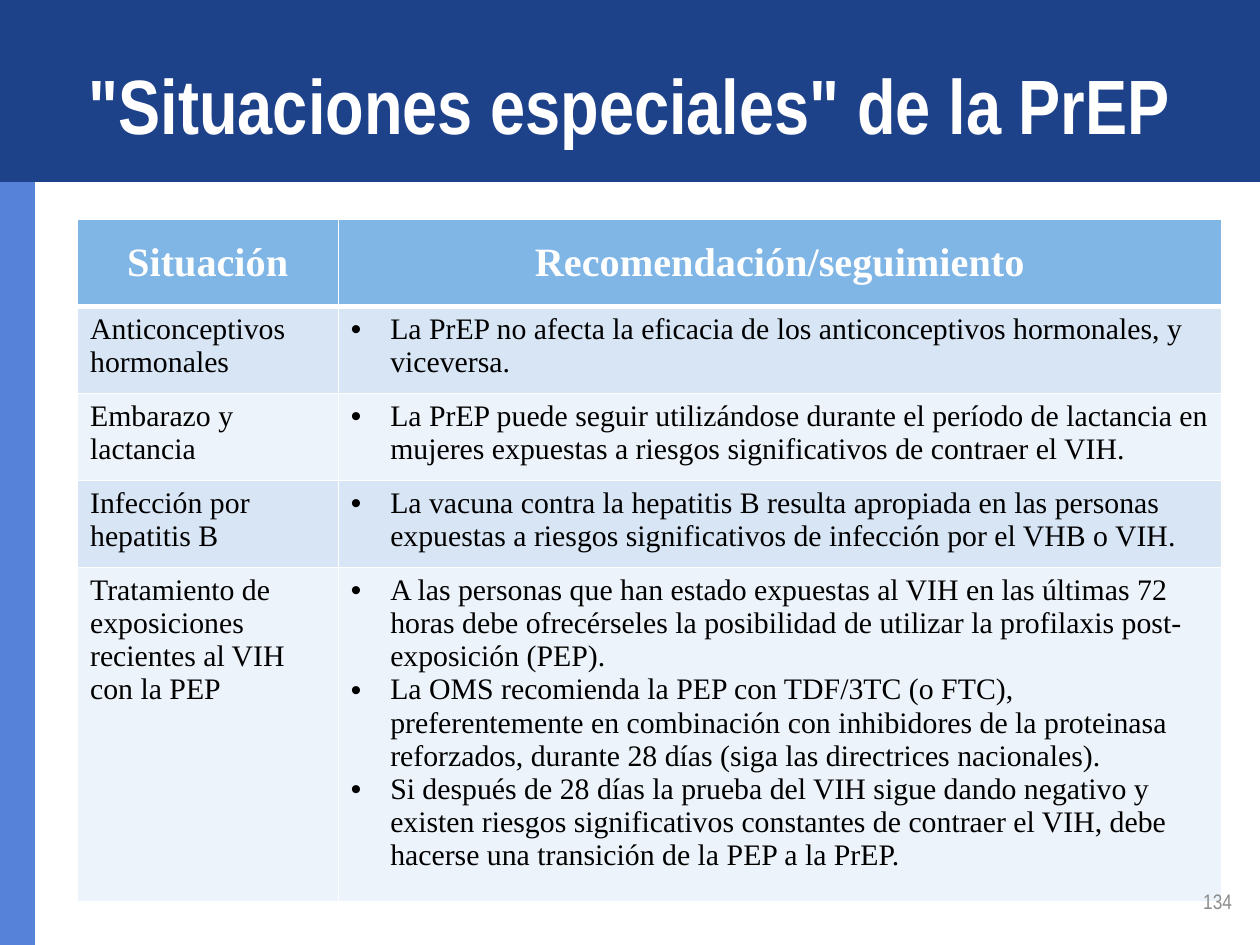
from lxml.etree import SubElement
from pptx import Presentation
from pptx.dml.color import RGBColor
from pptx.enum.shapes import MSO_SHAPE as Preset
from pptx.enum.text import MSO_ANCHOR as Anchor, PP_ALIGN as Align
from pptx.oxml.ns import qn
from pptx.util import Pt

WHITE = RGBColor(0xFF, 0xFF, 0xFF)
BLACK = RGBColor(0, 0, 0)
GRAY = RGBColor(0x8C, 0x8C, 0x8C)
NAVY = RGBColor(0x1E, 0x42, 0x8A)
BLUE = RGBColor(0x56, 0x82, 0xDA)
HEADER_BLUE = RGBColor(0x80, 0xB6, 0xE6)
BANDS = (RGBColor(0xD8, 0xE5, 0xF5), RGBColor(0xED, 0xF3, 0xFA))

NARROW = "Arial Narrow"
SERIF = "Times New Roman"

COLUMN_WIDTHS = (149, 505)
ROW_HEIGHTS = (49.7, 49.7, 49.7, 49.7, 172)
INDENT = 22.5

HEADINGS = ("Situación", "Recomendación/seguimiento")
SITUATIONS = (
    ("Anticonceptivos hormonales", (
        "La PrEP no afecta la eficacia de los anticonceptivos hormonales, y viceversa.",
    )),
    ("Embarazo y lactancia", (
        "La PrEP puede seguir utilizándose durante el período de lactancia en "
        "mujeres expuestas a riesgos significativos de contraer el VIH.",
    )),
    ("Infección por hepatitis B", (
        "La vacuna contra la hepatitis B resulta apropiada en las personas "
        "expuestas a riesgos significativos de infección por el VHB o VIH.",
    )),
    ("Tratamiento de exposiciones recientes al VIH con la PEP", (
        "A las personas que han estado expuestas al VIH en las últimas 72 horas debe "
        "ofrecérseles la posibilidad de utilizar la profilaxis post-exposición (PEP).",
        "La OMS recomienda la PEP con TDF/3TC (o FTC), preferentemente en combinación con "
        "inhibidores de la proteinasa reforzados, durante 28 días (siga las directrices "
        "nacionales).",
        "Si después de 28 días la prueba del VIH sigue dando negativo y existen riesgos "
        "significativos constantes de contraer el VIH, debe hacerse una transición de la "
        "PEP a la PrEP.",
    )),
)


def style(para, font, size, color, bold=False, align=Align.LEFT):
    para.alignment = align
    para.font.name = font
    para.font.size = Pt(size)
    para.font.bold = bold
    para.font.color.rgb = color


def add_bar(page, box, color):
    bar = page.shapes.add_shape(Preset.RECTANGLE, *map(Pt, box))
    bar.shadow.inherit = False
    bar.fill.solid()
    bar.fill.fore_color.rgb = color
    bar.line.fill.background()


def add_label(page, box, text, **look):
    frame = page.shapes.add_textbox(*map(Pt, box)).text_frame
    frame.word_wrap = True
    frame.vertical_anchor = Anchor.MIDDLE
    para = frame.paragraphs[0]
    para.text = text
    style(para, **look)


def add_bullet(para):
    properties = para._p.get_or_add_pPr()
    properties.set("marL", str(Pt(INDENT)))
    properties.set("indent", str(-Pt(INDENT)))
    SubElement(properties, qn("a:buFont"), typeface="Arial")
    SubElement(properties, qn("a:buChar"), char="•")


def add_borders(cell, top, bottom):
    properties = cell._tc.get_or_add_tcPr()
    for side, width in (("L", 1), ("R", 1), ("T", top), ("B", bottom)):
        line = SubElement(properties, qn(f"a:ln{side}"), w=str(Pt(width)))
        fill = SubElement(line, qn("a:solidFill"))
        SubElement(fill, qn("a:srgbClr"), val=str(WHITE))


def fill_cell(cell, texts, background, top=1, bottom=1, **look):
    """Borders go in before the fill, as the order of the cell's XML demands."""
    add_borders(cell, top, bottom)
    cell.fill.solid()
    cell.fill.fore_color.rgb = background
    cell.text_frame.text = "\n".join(texts)
    for para in cell.text_frame.paragraphs:
        style(para, font=SERIF, **look)


def add_situation_table(page, left, top):
    table = page.shapes.add_table(
        len(ROW_HEIGHTS), len(COLUMN_WIDTHS), Pt(left), Pt(top),
        Pt(sum(COLUMN_WIDTHS)), Pt(sum(ROW_HEIGHTS))).table
    for column, width in zip(table.columns, COLUMN_WIDTHS):
        column.width = Pt(width)
    for row, height in zip(table.rows, ROW_HEIGHTS):
        row.height = Pt(height)

    for index, heading in enumerate(HEADINGS):
        cell = table.cell(0, index)
        fill_cell(cell, [heading], HEADER_BLUE, bottom=3,
                  size=23, color=WHITE, bold=True, align=Align.CENTER)
        cell.vertical_anchor = Anchor.MIDDLE
    for index, (situation, advice) in enumerate(SITUATIONS):
        name_cell, advice_cell = table.rows[index + 1].cells
        for cell, texts in ((name_cell, [situation]), (advice_cell, advice)):
            fill_cell(cell, texts, BANDS[index % 2], top=1 if index else 3,
                      size=17, color=BLACK)
        for para in advice_cell.text_frame.paragraphs:
            add_bullet(para)


def main():
    deck = Presentation()
    deck.slide_width, deck.slide_height = Pt(720), Pt(540)
    page = deck.slides.add_slide(deck.slide_layouts[6])
    add_bar(page, (0, 94, 20, 446), BLUE)
    add_bar(page, (0, 0, 720, 104), NAVY)
    add_label(page, (36, 25, 648, 68), '"Situaciones especiales" de la PrEP',
              font=NARROW, size=44, color=WHITE, bold=True, align=Align.CENTER)
    add_situation_table(page, 44.3, 125.5)
    add_label(page, (543, 500.5, 168, 29), "134",
              font=NARROW, size=12, color=GRAY, align=Align.RIGHT)
    deck.save("out.pptx")


if __name__ == "__main__":
    main()
